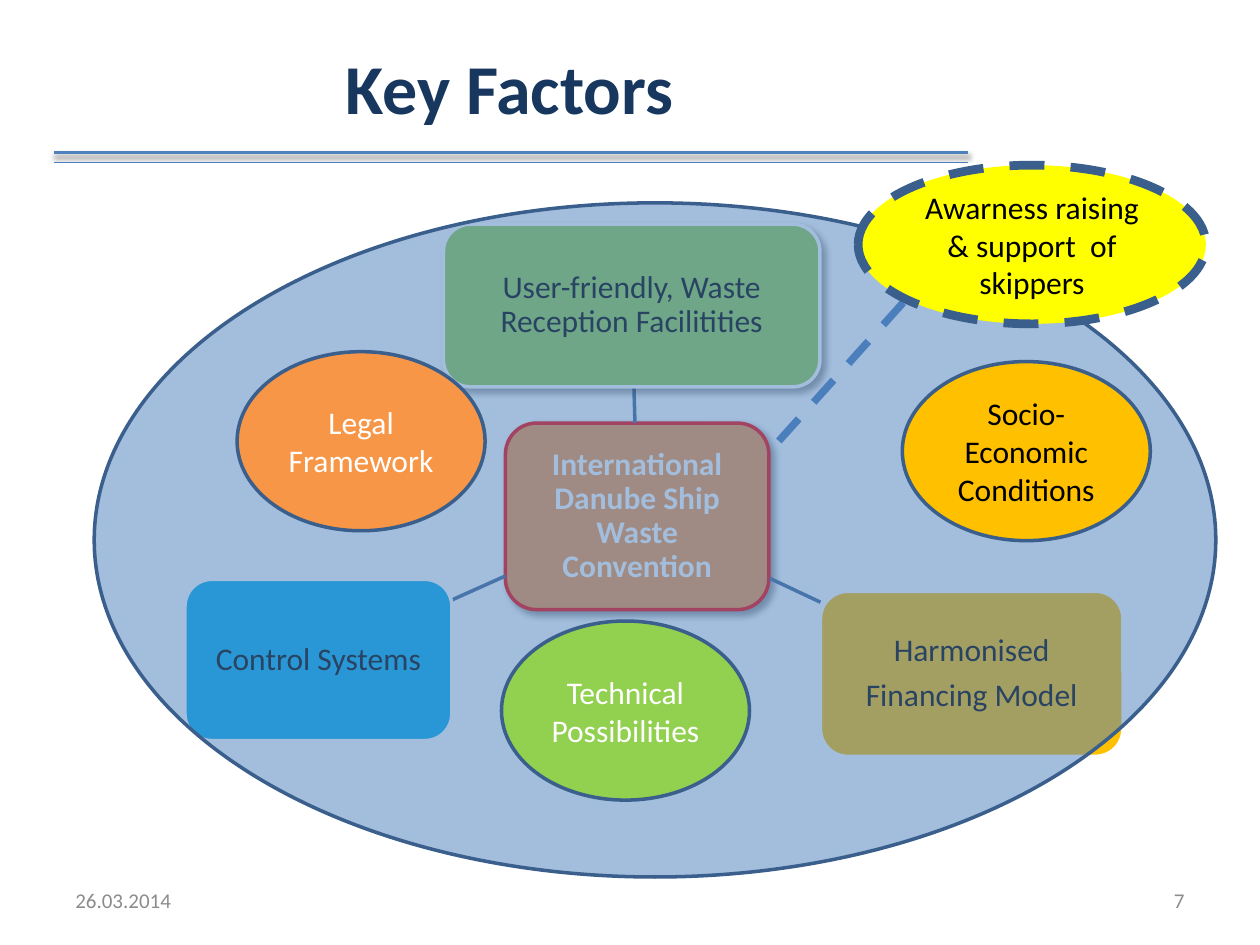
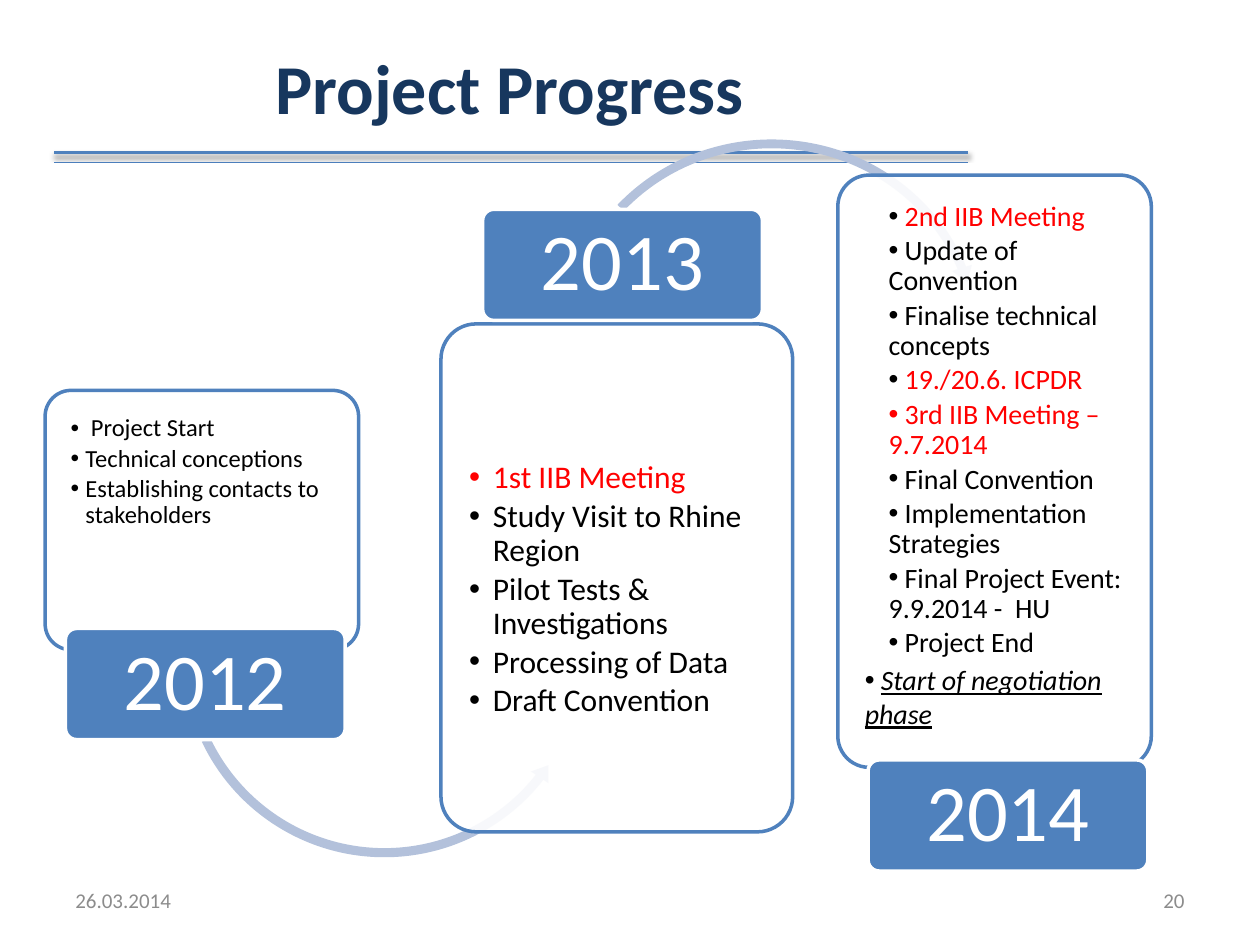
from dataclasses import dataclass

from pptx import Presentation
from pptx.dml.color import RGBColor
from pptx.enum.dml import MSO_LINE
from pptx.enum.shapes import MSO_CONNECTOR, MSO_SHAPE
from pptx.enum.text import MSO_ANCHOR, PP_ALIGN
from pptx.oxml.xmlchemy import OxmlElement
from pptx.util import Cm, Pt

ROUNDED = MSO_SHAPE.ROUNDED_RECTANGLE
OVAL = MSO_SHAPE.OVAL
ARC_OVER = MSO_SHAPE.CIRCULAR_ARROW
ARC_UNDER = MSO_SHAPE.LEFT_CIRCULAR_ARROW
STRAIGHT = MSO_CONNECTOR.STRAIGHT
DASH = MSO_LINE.DASH
TOP, MIDDLE = MSO_ANCHOR.TOP, MSO_ANCHOR.MIDDLE
LEFT, CENTER, RIGHT = PP_ALIGN.LEFT, PP_ALIGN.CENTER, PP_ALIGN.RIGHT


@dataclass(frozen=True)
class Theme:
    font: str = "Calibri"
    title: str = "17375E"
    footer: str = "8C8C8C"
    blue: str = "4F81BD"
    rule: str = "4B7EBC"
    outline: str = "3A5F8C"
    spoke: str = "3F6797"
    arc: str = "B3C1DB"
    white: str = "FFFFFF"
    black: str = "000000"
    red: str = "FF0000"
    orange: str = "F79646"
    green: str = "92D050"
    amber: str = "FFC000"
    cyan: str = "00B0F0"
    yellow: str = "FFFF00"
    title_size: int = 40
    footer_size: int = 12
    label_size: int = 18
    year_size: int = 46


THEME = Theme()
BOX_SHADOW = (40, 4, 3, 45)
RULE_SHADOW = (38, 3.1, 1.6, 90)


def rgb(value):
    return RGBColor.from_string(value)


def child(parent, tag, **attributes):
    element = OxmlElement(tag)
    for name, value in attributes.items():
        element.set(name, str(value))
    parent.append(element)
    return element


def set_shadow(item, shadow=None):
    effects = child(item._element.spPr, "a:effectLst")
    if shadow:
        opacity, blur, distance, angle = shadow
        outer = child(effects, "a:outerShdw", blurRad=Pt(blur), dist=Pt(distance),
                      dir=angle * 60000, rotWithShape=0)
        color = child(outer, "a:srgbClr", val=THEME.black)
        child(color, "a:alpha", val=opacity * 1000)


def set_line(item, color, width, dash=None):
    item.line.color.rgb = rgb(color)
    item.line.width = Pt(width)
    if dash:
        item.line.dash_style = dash


def add_line(slide, start, end, color, width, dash=None, shadow=None):
    line = slide.shapes.add_connector(STRAIGHT, *map(Cm, start + end))
    set_line(line, color, width, dash)
    set_shadow(line, shadow)


def add_shape(slide, kind, box, fill, outline=None, width=2, dash=None,
              opacity=100, adjustments=(), shadow=None):
    shape = slide.shapes.add_shape(kind, *map(Cm, box))
    for index, value in enumerate(adjustments):
        shape.adjustments[index] = value
    shape.fill.solid()
    shape.fill.fore_color.rgb = rgb(fill)
    if opacity < 100:
        color = shape.fill._xPr.find(".//{*}srgbClr")
        child(color, "a:alpha", val=opacity * 1000)
    if outline:
        set_line(shape, outline, width, dash)
    else:
        shape.line.fill.background()
    set_shadow(shape, shadow)
    return shape


def prepare_frame(shape, anchor, margins):
    frame = shape.text_frame
    frame.word_wrap = True
    frame.vertical_anchor = anchor
    (frame.margin_left, frame.margin_top,
     frame.margin_right, frame.margin_bottom) = map(Cm, margins)
    return frame


def add_run(paragraph, text, size, color, bold=False, emphasis=False):
    run = paragraph.add_run()
    run.text = text
    run.font.name = THEME.font
    run.font.size = Pt(size)
    run.font.color.rgb = rgb(color)
    run.font.bold = bold
    run.font.italic = emphasis
    run.font.underline = emphasis


def write_lines(shape, lines, size, color, align=CENTER, anchor=MIDDLE,
                margins=(0.25, 0.13, 0.25, 0.13), bold=False, spacing=1, after=0):
    frame = prepare_frame(shape, anchor, margins)
    for index, text in enumerate(lines):
        paragraph = frame.add_paragraph() if index else frame.paragraphs[0]
        paragraph.alignment = align
        paragraph.line_spacing = spacing
        paragraph.space_after = Pt(after)
        add_run(paragraph, text, size, color, bold)


def add_text(slide, box, text, size, color, **options):
    write_lines(slide.shapes.add_textbox(*map(Cm, box)), [text], size, color, **options)


def add_slide(presentation, title, number):
    slide = presentation.slides.add_slide(presentation.slide_layouts[6])
    for left, text, align in ((1.27, "26.03.2014", LEFT), (18.2, number, RIGHT)):
        add_text(slide, (left, 17.65, 5.93, 1.01), text, THEME.footer_size,
                 THEME.footer, align=align)
    add_line(slide, (1.09, 3.07), (19.51, 3.07), THEME.blue, 2, shadow=RULE_SHADOW)
    add_line(slide, (1.09, 3.28), (19.51, 3.28), THEME.rule, 0.75)
    add_text(slide, (1.09, 0.76, 18.36, 3.18), title, THEME.title_size,
             THEME.title, anchor=TOP, bold=True)
    return slide


def add_factor_box(slide, box, lines, fill, outline=THEME.white,
                   color=THEME.black, bold=False, shadow=None):
    shape = add_shape(slide, ROUNDED, box, fill, outline, shadow=shadow)
    write_lines(shape, lines, THEME.label_size, color, bold=bold,
                margins=(0.13,) * 4, spacing=0.9, after=6.3)


def add_condition(slide, box, text, fill, color, width=2, dash=None):
    shape = add_shape(slide, OVAL, box, fill, THEME.outline, width, dash)
    write_lines(shape, [text], THEME.label_size, color)


def add_bullet(paragraph, left, hanging):
    properties = paragraph._p.get_or_add_pPr()
    properties.set("marL", str(Cm(left)))
    properties.set("indent", str(-Cm(hanging)))
    child(properties, "a:buFont", typeface="Arial")
    child(properties, "a:buChar", char="•")


def add_panel(slide, box, items, size, indent, hanging, top=0.36, closing=None):
    panel = add_shape(slide, ROUNDED, box, THEME.white, THEME.blue,
                      opacity=90, adjustments=[0.1])
    frame = prepare_frame(panel, TOP, (0.36, top, 0.36, 0.36))
    for index, runs in enumerate(items):
        paragraph = frame.add_paragraph() if index else frame.paragraphs[0]
        paragraph.alignment = LEFT
        add_bullet(paragraph, indent, hanging)
        paragraph.line_spacing = 0.9
        paragraph.space_after = Pt(size * 0.15)
        for text, color in runs:
            add_run(paragraph, text, size, color)
    if closing:
        paragraph = frame.add_paragraph()
        paragraph.alignment = LEFT
        add_bullet(paragraph, 0, 0)
        add_run(paragraph, " ", size, THEME.black)
        add_run(paragraph, closing, size, THEME.black, emphasis=True)


def add_year(slide, left, top, year):
    badge = add_shape(slide, ROUNDED, (left, top, 5.64, 2.24), THEME.blue,
                      THEME.white, adjustments=[0.1])
    write_lines(badge, [year], THEME.year_size, THEME.white,
                margins=(0.25, 0.15, 0.25, 0.15), spacing=0.9, after=16)


def black(*texts):
    return [[(text, THEME.black)] for text in texts]


def red(text):
    return [(text, THEME.red)]


def build_key_factors(presentation):
    slide = add_slide(presentation, "Key Factors", "7")
    add_factor_box(slide, (10.19, 8.53, 5.31, 3.76),
                   ["International Danube Ship Waste Convention"], THEME.orange,
                   THEME.red, THEME.white, bold=True, shadow=BOX_SHADOW)
    for start, end in (((12.8, 8.53), (12.78, 7.82)),
                       ((15.52, 11.66), (16.54, 12.14)),
                       ((10.19, 11.61), (9.12, 12.09))):
        add_line(slide, start, end, THEME.spoke, 2)
    add_factor_box(slide, (8.94, 4.52, 7.59, 3.28),
                   ["User-friendly, Waste Reception Facilitities"],
                   THEME.green, shadow=BOX_SHADOW)
    add_factor_box(slide, (16.54, 11.92, 6.1, 3.33),
                   ["Harmonised", "Financing Model"], THEME.amber)
    add_factor_box(slide, (3.73, 11.68, 5.38, 3.25), ["Control Systems"], THEME.cyan)

    add_shape(slide, OVAL, (1.9, 4.09, 22.61, 13.59), THEME.blue,
              THEME.outline, opacity=52)
    for left, top, text, fill, color in (
            (18.19, 7.29, "Socio-Economic Conditions", THEME.amber, THEME.black),
            (4.78, 7.09, "Legal Framework", THEME.orange, THEME.white),
            (10.11, 12.52, "Technical Possibilities", THEME.green, THEME.white)):
        add_condition(slide, (left, top, 5, 3.61), text, fill, color)
    add_line(slide, (15.7, 8.89), (18.9, 5.33), THEME.rule, 4.25, DASH)
    add_condition(slide, (17.3, 3.33, 7.01, 3.2),
                  "Awarness raising & support  of skippers",
                  THEME.yellow, THEME.black, 5, DASH)


def build_project_progress(presentation):
    slide = add_slide(presentation, "Project Progress", "20")
    add_panel(slide, (0.91, 7.87, 6.32, 5.23),
              black(" Project Start", "Technical conceptions",
                    "Establishing contacts to stakeholders"), 14, 0.3, 0.3)
    add_shape(slide, ARC_UNDER, (3.56, 9.02, 8.38, 8.38), THEME.arc,
              adjustments=(0.022, 2.607, 22.907, 92.79, 0.025))
    add_year(slide, 1.32, 12.67, "2012")

    add_panel(slide, (8.89, 6.53, 7.09, 10.24),
              [red("1st IIB Meeting"),
               *black("Study Visit to Rhine Region", "Pilot Tests & Investigations",
                      "Processing of Data", "Draft Convention")],
              18, 0.48, 0.48, top=2.57)
    add_shape(slide, ARC_OVER, (11.2, 2.69, 8.71, 8.46), THEME.arc,
              adjustments=(0.021, 2.581, 203.047, 133.138, 0.025))
    add_year(slide, 9.73, 4.22, "2013")

    space = (" ", THEME.black)
    add_panel(slide, (16.89, 3.53, 6.32, 11.94),
              [[space, *red("2nd IIB Meeting")],
               *black(" Update of Convention", " Finalise technical concepts"),
               [space, *red("19./20.6. ICPDR")],
               red(" 3rd IIB Meeting – 9.7.2014"),
               *black(" Final Convention", " Implementation Strategies",
                      " Final Project Event: 9.9.2014 -  HU", " Project End")],
              16, 0.48, 0, closing="Start of negotiation phase")
    add_year(slide, 17.5, 15.32, "2014")


def main():
    presentation = Presentation()
    presentation.slide_width = Cm(25.4)
    presentation.slide_height = Cm(19.05)
    build_key_factors(presentation)
    build_project_progress(presentation)
    presentation.save("out.pptx")


if __name__ == "__main__":
    main()
